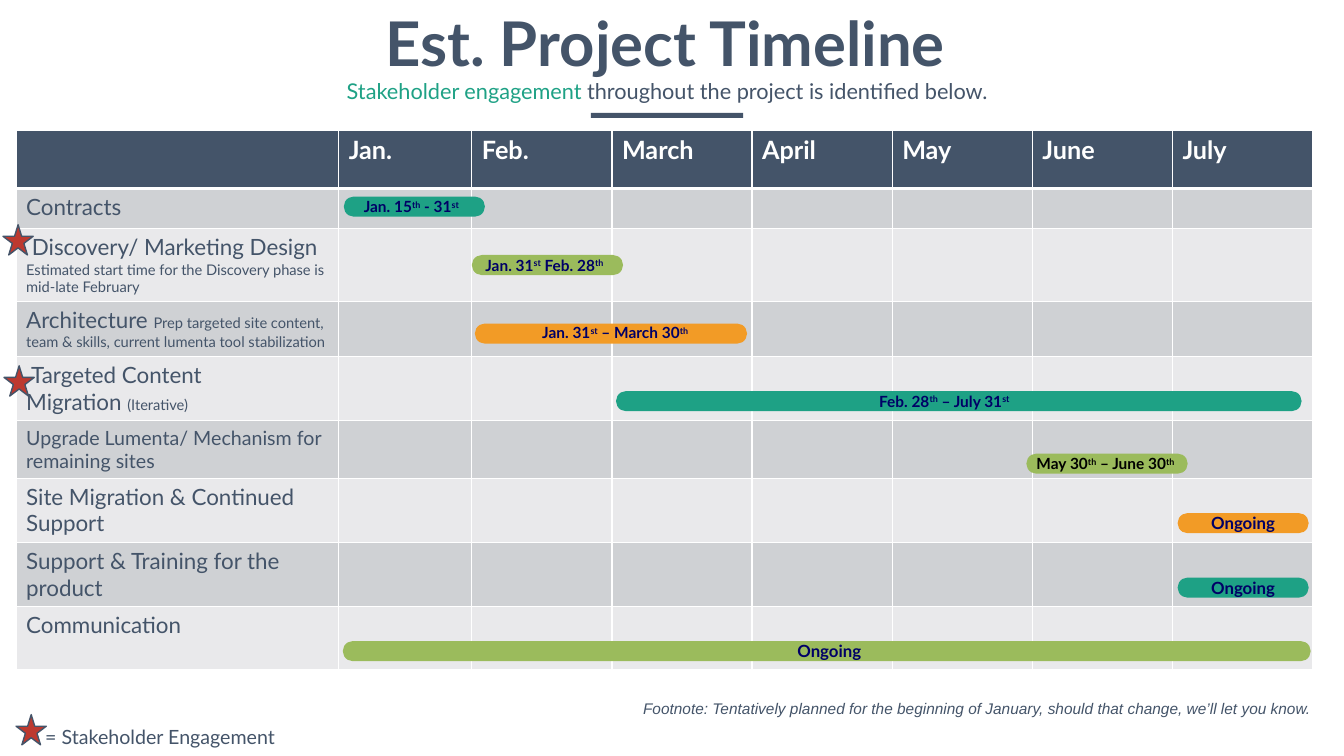
from dataclasses import dataclass
from typing import Any, NamedTuple, Optional

import pptx
import pptx.dml.color
import pptx.enum.shapes
import pptx.enum.text
import pptx.oxml
import pptx.oxml.ns
import pptx.util

RGBColor = pptx.dml.color.RGBColor
MSO_SHAPE = pptx.enum.shapes.MSO_SHAPE
PP_ALIGN = pptx.enum.text.PP_ALIGN
MSO_ANCHOR = pptx.enum.text.MSO_ANCHOR

EMU_PER_PX = 9144

SLATE = RGBColor(0x44, 0x54, 0x69)
GREEN = RGBColor(0x1E, 0xA1, 0x85)
OLIVE = RGBColor(0x9B, 0xBB, 0x5C)
ORANGE = RGBColor(0xF2, 0x9B, 0x26)
RED = RGBColor(0xBD, 0x39, 0x2F)
NAVY = RGBColor(0x00, 0x00, 0x66)
BLACK = RGBColor(0x00, 0x00, 0x00)
WHITE = RGBColor(0xFF, 0xFF, 0xFF)
DARK_BAND = RGBColor(0xCF, 0xD1, 0xD4)
LIGHT_BAND = RGBColor(0xE9, 0xE9, 0xEB)


class Box(NamedTuple):
    left: int
    top: int
    width: int
    height: int


class Piece(NamedTuple):
    text: str
    size: float
    color: RGBColor = SLATE
    bold: bool = False
    italic: bool = False
    superscript: bool = False
    font: str = "Lato"


@dataclass(frozen=True)
class Task:
    height: int
    lines: tuple[tuple[Piece, ...], ...]


@dataclass(frozen=True)
class Bar:
    box: Box
    fill: RGBColor
    label: tuple[str, ...]
    label_box: Optional[Box] = None
    align: PP_ALIGN = PP_ALIGN.CENTER
    size: int = 11
    color: RGBColor = NAVY


MONTHS = ("Jan.", "Feb.", "March", "April", "May", "June", "July")
COLUMN_WIDTHS = (320, 132) + (139,) * 6
HEADER_HEIGHT = 58
TASKS = (
    Task(39, ((Piece("Contracts", 16),),)),
    Task(72, ((Piece(" Discovery/ Marketing Design ", 16),
               Piece("Estimated start time for the Discovery phase is mid-late February", 10.5)),)),
    Task(55, ((Piece("Architecture ", 16),
               Piece("Prep targeted site content, team & skills, current lumenta tool stabilization", 10.5)),)),
    Task(63, ((Piece(" Targeted Content", 16),),
              (Piece("Migration ", 16), Piece("(Iterative)", 10.5)))),
    Task(57, ((Piece("Upgrade Lumenta/ Mechanism for remaining sites", 14),),)),
    Task(64, ((Piece("Site Migration & Continued Support", 16),),)),
    Task(63, ((Piece("Support & Training for the product", 16),),)),
    Task(63, ((Piece("Communication", 16),),)),
)
BARS = (
    Bar(Box(1168, 509, 130, 20), ORANGE, ("Ongoing",), size=12),
    Bar(Box(1168, 573, 130, 20), GREEN, ("Ongoing",), size=12),
    Bar(Box(341, 195, 140, 20), GREEN, ("Jan. 15", "th", " - 31", "st"),
        Box(351, 191, 131, 29), PP_ALIGN.LEFT),
    Bar(Box(468, 253, 150, 20), OLIVE, ("Jan. 31", "st", " Feb. 28", "th "),
        Box(460, 249, 162, 29)),
    Bar(Box(471, 321, 270, 20), ORANGE, ("Jan. 31", "st", " – March 30", "th"),
        Box(528, 316, 184, 29), PP_ALIGN.LEFT),
    Bar(Box(611, 388, 680, 20), GREEN, ("Feb. 28", "th", " – July 31", "st"),
        Box(862, 384, 168, 29), PP_ALIGN.LEFT),
    Bar(Box(1018, 450, 160, 20), OLIVE, ("May 30", "th", " – June 30", "th "),
        Box(1008, 446, 179, 29), color=BLACK),
    Bar(Box(340, 636, 960, 20), OLIVE, ("Ongoing",), Box(757, 631, 131, 30), size=12),
)
STARS = (Box(3, 223, 30, 30), Box(4, 363, 30, 30), Box(16, 709, 30, 30))


def px(length: int) -> int:
    return pptx.util.Emu(length * EMU_PER_PX)


def place(box: Box) -> tuple[int, ...]:
    return tuple(px(length) for length in box)


def write_pieces(paragraph: Any, pieces: tuple[Piece, ...]) -> None:
    for piece in pieces:
        run = paragraph.add_run()
        run.text = piece.text
        run.font.name = piece.font
        run.font.size = pptx.util.Pt(piece.size)
        run.font.bold = piece.bold
        run.font.italic = piece.italic
        run.font.color.rgb = piece.color
        if piece.superscript:
            run.font._element.set("baseline", "30000")


def set_margins(text_frame: Any, horizontal: int, vertical: int) -> None:
    text_frame.margin_left = text_frame.margin_right = px(horizontal)
    text_frame.margin_top = text_frame.margin_bottom = px(vertical)


def add_text(shapes: Any, box: Box, pieces: tuple[Piece, ...],
             align: PP_ALIGN = PP_ALIGN.LEFT) -> Any:
    text_frame = shapes.add_textbox(*place(box)).text_frame
    text_frame.word_wrap = True
    paragraph = text_frame.paragraphs[0]
    paragraph.alignment = align
    write_pieces(paragraph, pieces)
    return text_frame


def add_filled(shapes: Any, kind: MSO_SHAPE, box: Box, fill: RGBColor) -> Any:
    shape = shapes.add_shape(kind, *place(box))
    shape.shadow.inherit = False
    shape.fill.solid()
    shape.fill.fore_color.rgb = fill
    shape.line.fill.background()
    return shape


def add_heading(slide: Any) -> None:
    shapes = slide.shapes.add_group_shape().shapes
    title = add_text(shapes, Box(58, 3, 1204, 79),
                     (Piece("Est. Project Timeline", 44, bold=True),), PP_ALIGN.CENTER)
    set_margins(title, 5, 2)
    add_filled(shapes, MSO_SHAPE.RECTANGLE, Box(586, 112, 151, 5), SLATE)
    subtitle = add_text(shapes, Box(94, 66, 1135, 46),
                        (Piece("Stakeholder engagement ", 15.5, GREEN),
                         Piece("throughout the project is identified below.", 15.5)),
                        PP_ALIGN.CENTER)
    set_margins(subtitle, 12, 6)
    subtitle.paragraphs[0].line_spacing = 1.2
    subtitle.paragraphs[0].space_before = pptx.util.Pt(3)


def style_cell(cell: Any, fill: RGBColor, bottom_width: int) -> None:
    cell.fill.solid()
    cell.fill.fore_color.rgb = fill
    properties = cell._tc.get_or_add_tcPr()
    for index, (side, width) in enumerate((("L", 1), ("R", 1), ("T", 1), ("B", bottom_width))):
        border = pptx.oxml.parse_xml(
            f'<a:ln{side} {pptx.oxml.ns.nsdecls("a")} w="{pptx.util.Pt(width)}">'
            f'<a:solidFill><a:srgbClr val="{WHITE}"/></a:solidFill></a:ln{side}>')
        properties.insert(index, border)


def add_schedule(slide: Any) -> None:
    heights = (HEADER_HEIGHT, *(task.height for task in TASKS))
    box = Box(16, 129, sum(COLUMN_WIDTHS), sum(heights))
    table = slide.shapes.add_table(len(heights), len(COLUMN_WIDTHS), *place(box)).table
    for column, width in zip(table.columns, COLUMN_WIDTHS):
        column.width = px(width)
    for index, height in enumerate(heights):
        table.rows[index].height = px(height)
        band = SLATE if index == 0 else DARK_BAND if index % 2 else LIGHT_BAND
        for cell in table.rows[index].cells:
            style_cell(cell, band, 1 if index else 3)
    for column, month in enumerate(MONTHS, start=1):
        write_pieces(table.cell(0, column).text_frame.paragraphs[0],
                     (Piece(month, 18, WHITE, bold=True),))
    for row, task in enumerate(TASKS, start=1):
        text_frame = table.cell(row, 0).text_frame
        for index, line in enumerate(task.lines):
            paragraph = text_frame.add_paragraph() if index else text_frame.paragraphs[0]
            write_pieces(paragraph, line)


def add_bar(slide: Any, bar: Bar) -> None:
    pieces = tuple(Piece(text, bar.size, bar.color, bold=True, superscript=index % 2 == 1)
                   for index, text in enumerate(bar.label))
    shapes = slide.shapes.add_group_shape().shapes if bar.label_box else slide.shapes
    shape = add_filled(shapes, MSO_SHAPE.ROUNDED_RECTANGLE, bar.box, bar.fill)
    shape.adjustments[0] = 0.5
    if bar.label_box:
        add_text(shapes, bar.label_box, pieces, bar.align)
    else:
        set_margins(shape.text_frame, 27, 13)
        shape.text_frame.vertical_anchor = MSO_ANCHOR.MIDDLE
        shape.text_frame.paragraphs[0].alignment = bar.align
        write_pieces(shape.text_frame.paragraphs[0], pieces)


def add_star(slide: Any, box: Box) -> None:
    star = add_filled(slide.shapes, MSO_SHAPE.STAR_5_POINT, box, RED)
    star.line.color.rgb = SLATE
    star.line.width = pptx.util.Pt(1)


def add_notes(slide: Any) -> None:
    add_text(slide.shapes, Box(35, 714, 305, 34), (Piece("= Stakeholder Engagement", 14),))
    footnote = add_text(
        slide.shapes, Box(457, 679, 863, 40),
        (Piece("Footnote: Tentatively planned for the beginning of January, "
               "should that change, we’ll let you know.", 11, italic=True, font="Arial"),),
        PP_ALIGN.RIGHT)
    footnote.margin_right = px(19)
    footnote.margin_bottom = px(7)
    footnote.vertical_anchor = MSO_ANCHOR.BOTTOM


def main() -> None:
    presentation = pptx.Presentation()
    presentation.slide_width = px(1333)
    presentation.slide_height = px(750)
    slide = presentation.slides.add_slide(presentation.slide_layouts[6])
    add_heading(slide)
    add_schedule(slide)
    for star in STARS:
        add_star(slide, star)
    add_notes(slide)
    for bar in BARS:
        add_bar(slide, bar)
    presentation.save("out.pptx")


if __name__ == "__main__":
    main()
